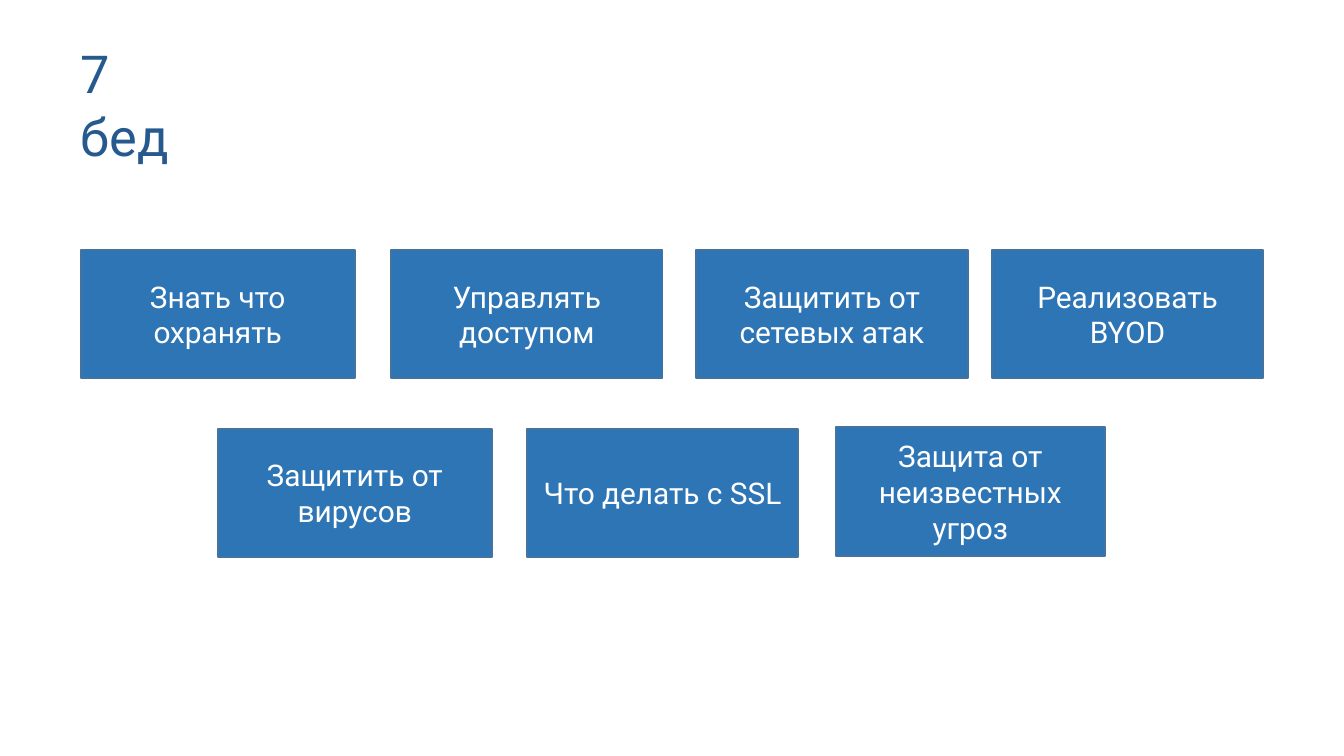
from typing import NamedTuple

from pptx import Presentation
from pptx import util as u
from pptx.dml.color import RGBColor
from pptx.enum import shapes, text

WIDE = u.Inches(10)
HIGH = WIDE * 9 // 16
UNIT = WIDE // 100
TILE_HIGH = 9.55
FONT = "Roboto"
HUES = {"tile": "2E75B6", "edge": "43739E", "title": "265A8F", "label": "FFFFFF"}


class Tile(NamedTuple):
    label: str
    left: float
    top: float
    wide: float = 20.2


TOP, LOW = 18.6, 31.9
TILES = (
    Tile("Знать что охранять", 6, TOP, 20.4),
    Tile("Управлять доступом", 29.1, TOP),
    Tile("Защитить от сетевых атак", 51.8, TOP),
    Tile("Реализовать BYOD", 73.8, TOP),
    Tile("Защитить от вирусов", 16.2, LOW, 20.4),
    Tile("Что делать с SSL", 39.2, LOW),
    Tile("Защита от неизвестных угроз", 62.2, LOW - 0.1, 20),
)


def hue(name: str) -> RGBColor:
    return RGBColor.from_string(HUES[name])


def grid(*cells: float) -> list[int]:
    return [round(cell * UNIT) for cell in cells]


def write(shape, words: str, size: int, ink: str, align, anchor) -> None:
    frame = shape.text_frame
    frame.text = words
    frame.word_wrap = True
    frame.auto_size = text.MSO_AUTO_SIZE.NONE
    frame.vertical_anchor = anchor
    par = frame.paragraphs[0]
    par.alignment = align
    par.line_spacing = 1.0
    font = par.runs[0].font
    font.name, font.size = FONT, u.Pt(size)
    font.color.rgb = hue(ink)


def draw_tile(slide, tile: Tile) -> None:
    box = slide.shapes.add_shape(
        shapes.MSO_SHAPE.RECTANGLE,
        *grid(tile.left, tile.top, tile.wide, TILE_HIGH))
    box.shadow.inherit = False
    box.fill.solid()
    box.fill.fore_color.rgb = hue("tile")
    box.line.color.rgb = hue("edge")
    box.line.width = u.Pt(1)
    write(box, tile.label, 16, "label", text.PP_ALIGN.CENTER, text.MSO_ANCHOR.MIDDLE)


def draw_title(slide, words: str) -> None:
    title = slide.shapes.title
    title.left, title.top, title.width, title.height = grid(5, 2.6, 11.3, 5.7)
    write(title, words, 28, "title", text.PP_ALIGN.LEFT, text.MSO_ANCHOR.TOP)


def main() -> None:
    """Build the slide of seven troubles as two rows of tiles."""
    deck = Presentation()
    deck.slide_width, deck.slide_height = WIDE, HIGH
    slide = deck.slides.add_slide(deck.slide_layouts[5])
    draw_title(slide, "7 бед")
    for tile in TILES:
        draw_tile(slide, tile)
    deck.save("out.pptx")


if __name__ == "__main__":
    main()
